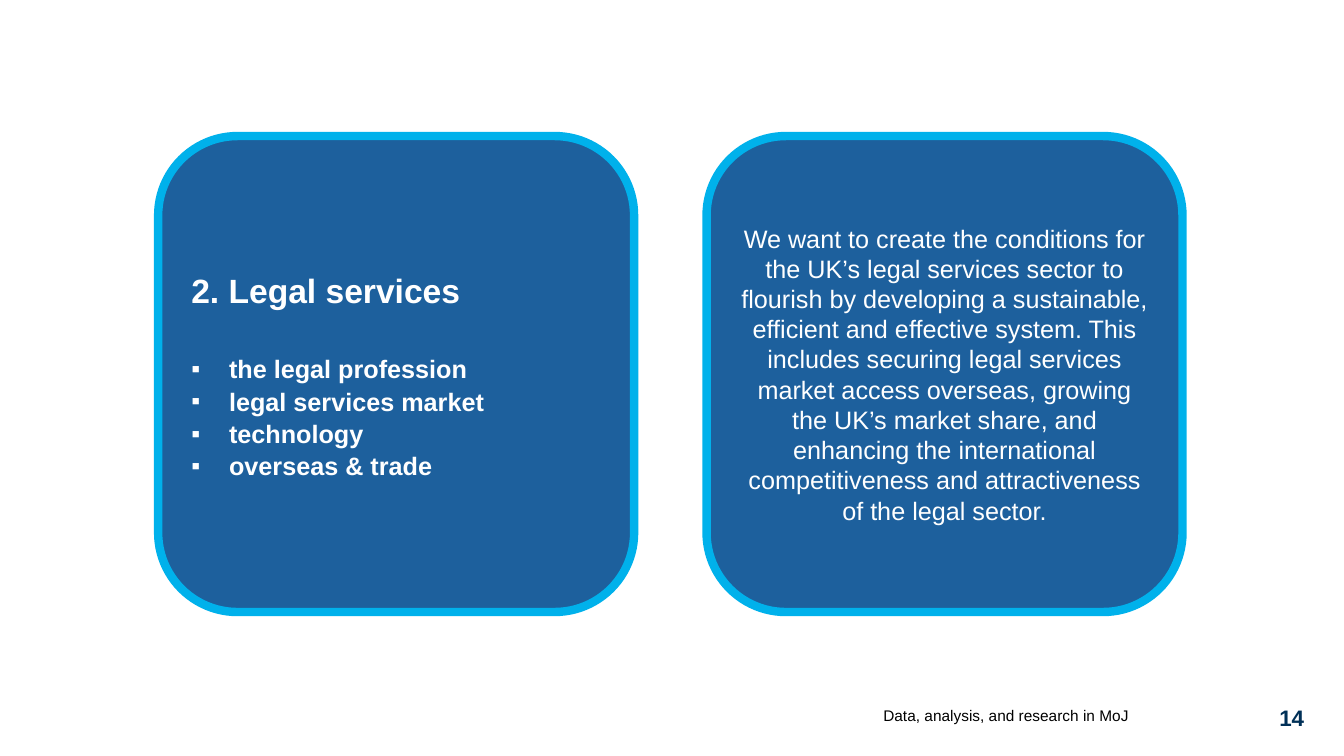
from dataclasses import dataclass

from lxml.etree import SubElement
from pptx import Presentation
from pptx.dml.color import RGBColor as Color
from pptx.enum.shapes import MSO_SHAPE as Preset
from pptx.enum.text import MSO_ANCHOR as Anchor, PP_ALIGN as Align
from pptx.oxml.ns import qn
from pptx.util import Pt


@dataclass(frozen=True)
class Theme:
    font: str = "Arial"
    panel: Color = Color.from_string("1D609D")
    border: Color = Color.from_string("00B1EB")
    light: Color = Color.from_string("FFFFFF")
    dark: Color = Color.from_string("000000")
    navy: Color = Color.from_string("003057")
    heading: int = 24
    body: int = 18
    number: int = 16
    footer: int = 11


theme = Theme()


def write(para, text, size, color=theme.light, bold=False, align=Align.LEFT,
          spacing=None, after=None, bullet=None, indent=27):
    para.alignment = align
    para.line_spacing = spacing
    if after:
        para.space_after = Pt(after)
    if bullet:
        props = para._p.get_or_add_pPr()
        props.set("marL", str(Pt(indent)))
        props.set("indent", str(-Pt(indent)))
        SubElement(props, qn("a:buFont"), typeface=theme.font)
        SubElement(props, qn("a:buChar"), char=bullet)
    span = para.add_run()
    span.text = text
    span.font.name = theme.font
    span.font.size = Pt(size)
    span.font.bold = bold
    span.font.color.rgb = color


deck = Presentation()
deck.slide_width, deck.slide_height = Pt(960), Pt(540)
page = deck.slides.add_slide(deck.slide_layouts[6])

# Footer and page number
footers = [
    ("Data, analysis, and research in MoJ", (582.5, 498.2, 223.9, 25.9), Anchor.MIDDLE,
     dict(size=theme.footer, color=theme.dark, align=Align.RIGHT)),
    ("14", (908.6, 503.3, 28.1, 20.2), Anchor.TOP,
     dict(size=theme.number, color=theme.navy, bold=True, align=Align.CENTER)),
]
for text, place, anchor, style in footers:
    frame = page.shapes.add_textbox(*map(Pt, place)).text_frame
    frame.margin_left = frame.margin_right = frame.margin_top = frame.margin_bottom = 0
    frame.word_wrap = True
    frame.vertical_anchor = anchor
    write(frame.paragraphs[0], text, **style)

# Two rounded panels
panel_left, panel_top, panel_side, panel_step = 113, 97.2, 340, 391.7
frames = []
for column in range(2):
    box = page.shapes.add_shape(Preset.ROUNDED_RECTANGLE, Pt(panel_left + column * panel_step),
                                Pt(panel_top), Pt(panel_side), Pt(panel_side))
    box.shadow.inherit = False
    box.fill.solid()
    box.fill.fore_color.rgb = theme.panel
    box.line.color.rgb = theme.border
    box.line.width = Pt(6)
    box.text_frame.word_wrap = True
    box.text_frame.vertical_anchor = Anchor.MIDDLE
    frames.append(box.text_frame)
topic, aim = frames

# Topic and its areas
write(topic.paragraphs[0], "2. Legal services", theme.heading, bold=True, spacing=1.07, after=29.5)
for area in ("the legal profession", "legal services market", "technology", "overseas & trade"):
    write(topic.add_paragraph(), area, theme.body, bold=True, spacing=1.07, bullet="▪")

# Aim
write(aim.paragraphs[0],
      "We want to create the conditions for the UK’s legal services sector to flourish by "
      "developing a sustainable, efficient and effective system. This includes securing legal "
      "services market access overseas, growing the UK’s market share, and enhancing the "
      "international competitiveness and attractiveness of the legal sector.",
      theme.body, align=Align.CENTER)

deck.save("out.pptx")
